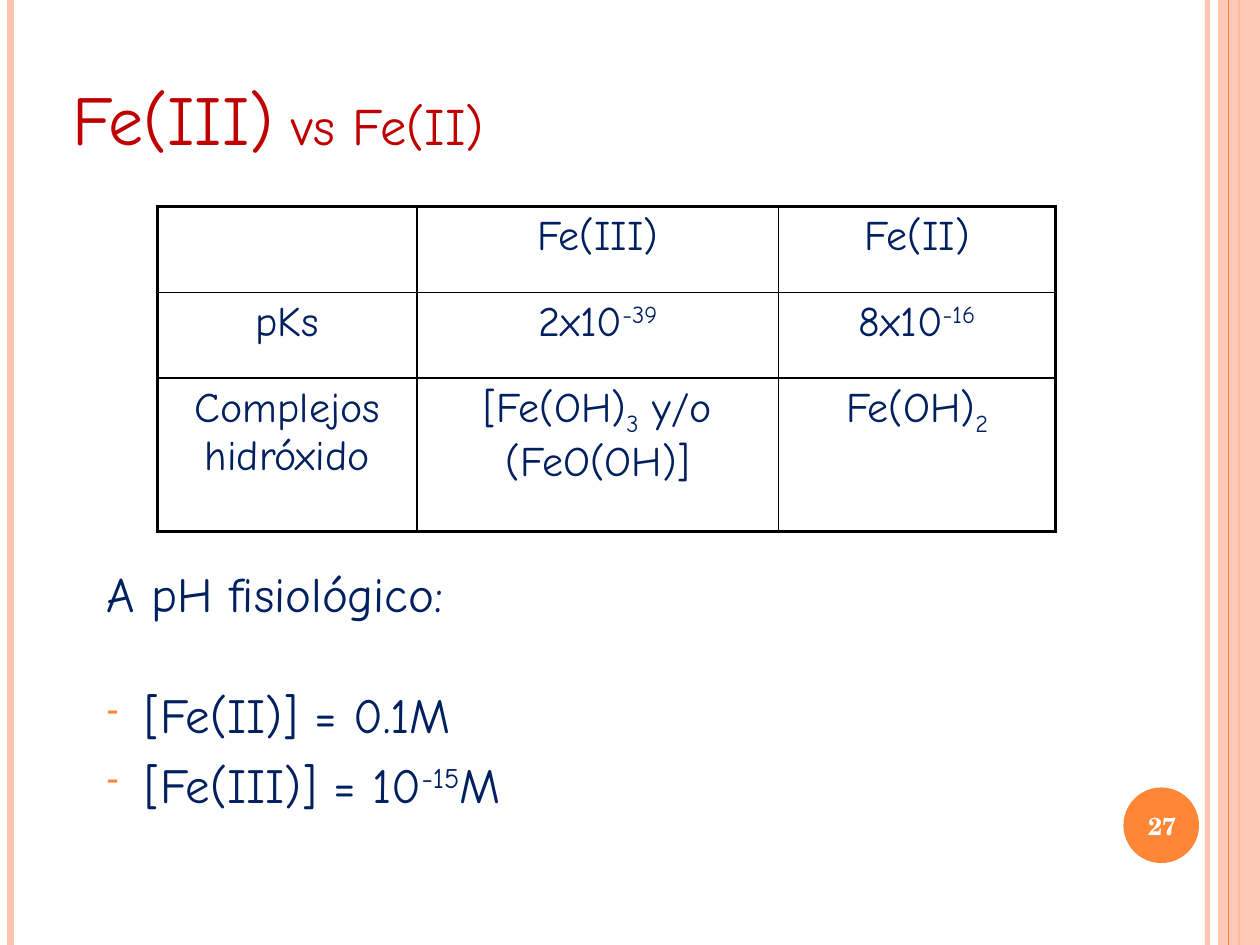
from dataclasses import dataclass

from lxml import etree
from pptx import Presentation
from pptx.dml.color import RGBColor
from pptx.enum.shapes import MSO_CONNECTOR, MSO_SHAPE
from pptx.enum.text import MSO_ANCHOR, MSO_AUTO_SIZE, PP_ALIGN
from pptx.oxml.ns import qn
from pptx.util import Pt

STRAIGHT = MSO_CONNECTOR.STRAIGHT
RECTANGLE, ELLIPSE = MSO_SHAPE.RECTANGLE, MSO_SHAPE.OVAL
LEFT, CENTER = PP_ALIGN.LEFT, PP_ALIGN.CENTER
TOP, MIDDLE, BOTTOM = MSO_ANCHOR.TOP, MSO_ANCHOR.MIDDLE, MSO_ANCHOR.BOTTOM
NO_AUTOFIT = MSO_AUTO_SIZE.NONE
SUPERSCRIPT, SUBSCRIPT = 30, -25
TITLE_ONLY = 5


@dataclass(frozen=True)
class Theme:
    font: str = "Comic Neue"
    number_font: str = "TeX Gyre Schola"
    title: str = "C00000"
    text: str = "002060"
    accent: str = "FE8637"
    pale: str = "FEC3AE"
    border: str = "000000"
    white: str = "FFFFFF"
    title_size: int = 40
    subtitle_size: int = 30
    body_size: int = 28
    table_size: int = 24
    number_size: int = 14
    outer_border: float = 2.25
    inner_border: float = 1


def add_child(parent, tag, **attributes):
    child = etree.SubElement(parent, qn(tag))
    for name, value in attributes.items():
        child.set(name, str(value))
    return child


def set_alpha(element, percent):
    for color in element.iter(qn("a:srgbClr")):
        add_child(color, "a:alpha", val=percent * 1000)


class SlideBuilder:
    def __init__(self, slide, theme):
        self.slide = slide
        self.theme = theme

    def rule(self, x, width, color, alpha=100):
        line = self.slide.shapes.add_connector(STRAIGHT, Pt(x), Pt(0), Pt(x), Pt(540))
        line.line.color.rgb = RGBColor.from_string(color)
        line.line.width = Pt(width)
        properties = line._element.spPr
        if alpha < 100:
            set_alpha(properties, alpha)
        add_child(properties, "a:effectLst")

    def shape(self, kind, place, color, alpha=100):
        shape = self.slide.shapes.add_shape(kind, *map(Pt, place))
        shape.shadow.inherit = False
        shape.fill.solid()
        shape.fill.fore_color.rgb = RGBColor.from_string(color)
        shape.line.fill.background()
        if alpha < 100:
            set_alpha(shape._element.spPr, alpha)

    def run(self, para, text, size, color, font=None, bold=False, baseline=0):
        span = para.add_run()
        span.text = text
        span.font.size = Pt(size)
        span.font.name = font or self.theme.font
        span.font.bold = bold
        span.font.color.rgb = RGBColor.from_string(color)
        if baseline:
            span.font._element.set("baseline", str(baseline * 1000))

    def frame(self, box, anchor):
        frame = box.text_frame
        frame.word_wrap = True
        frame.auto_size = NO_AUTOFIT
        frame.vertical_anchor = anchor
        return frame

    def title(self, place, spans):
        box = self.slide.shapes.title
        box.left, box.top, box.width, box.height = map(Pt, place)
        para = self.frame(box, BOTTOM).paragraphs[0]
        para.alignment = LEFT
        for text, size in spans:
            self.run(para, text, size, self.theme.title)

    def body(self, place, lines):
        frame = self.frame(self.slide.shapes.add_textbox(*map(Pt, place)), TOP)
        for index, (space, bullet, spans) in enumerate(lines):
            para = frame.add_paragraph() if index else frame.paragraphs[0]
            para.space_before = Pt(space)
            properties = para._p.get_or_add_pPr()
            properties.set("marL", str(Pt(21.6)))
            properties.set("indent", str(-Pt(21.6)))
            if bullet:
                color = add_child(properties, "a:buClr")
                add_child(color, "a:srgbClr", val=self.theme.accent)
                add_child(properties, "a:buSzPct", val=70000)
                add_child(properties, "a:buChar", char=bullet)
            for text, baseline in spans:
                self.run(para, text, self.theme.body_size, self.theme.text, baseline=baseline)

    def page_number(self, place, text):
        box = self.slide.shapes.add_textbox(*map(Pt, place))
        para = self.frame(box, MIDDLE).paragraphs[0]
        para.alignment = CENTER
        theme = self.theme
        self.run(para, text, theme.number_size, theme.white, theme.number_font, bold=True)

    def cell_borders(self, cell, outer_sides):
        properties = cell._tc.get_or_add_tcPr()
        for index, side in enumerate(("L", "R", "T", "B")):
            outer = side in outer_sides
            width = self.theme.outer_border if outer else self.theme.inner_border
            line = etree.Element(qn(f"a:ln{side}"), w=str(Pt(width)))
            fill = add_child(line, "a:solidFill")
            add_child(fill, "a:srgbClr", val=self.theme.border)
            properties.insert(index, line)

    def table(self, left, top, widths, heights, rows):
        frame = self.slide.shapes.add_table(
            len(heights), len(widths), Pt(left), Pt(top), Pt(sum(widths)), Pt(sum(heights)))
        table = frame.table
        table.first_row = table.horz_banding = False
        for column, width in zip(table.columns, widths):
            column.width = Pt(width)
        for row, height in zip(table.rows, heights):
            row.height = Pt(height)
        last_row, last_column = len(heights) - 1, len(widths) - 1
        for r, row in enumerate(rows):
            for c, spans in enumerate(row):
                cell = table.cell(r, c)
                cell.fill.background()
                edges = {"L": c == 0, "R": c == last_column, "T": r == 0, "B": r == last_row}
                self.cell_borders(cell, [side for side, outer in edges.items() if outer])
                para = cell.text_frame.paragraphs[0]
                para.alignment = CENTER
                spacing = add_child(para._p.get_or_add_pPr(), "a:spcBef")
                add_child(spacing, "a:spcPct", val=20000)
                for text, baseline in spans:
                    self.run(para, text, self.theme.table_size, self.theme.text, baseline=baseline)


def main():
    deck = Presentation()
    deck.slide_width, deck.slide_height = Pt(720), Pt(540)
    theme = Theme()
    page = SlideBuilder(deck.slides.add_slide(deck.slide_layouts[TITLE_ONLY]), theme)

    page.rule(690, 3, theme.pale, alpha=93)
    page.rule(6, 4.5, theme.pale)
    page.rule(708, 1.5, theme.accent)
    page.shape(RECTANGLE, (696, 0, 24, 540), theme.pale, alpha=87)
    page.rule(702, 0.75, theme.accent)
    page.shape(ELLIPSE, (642, 450, 43.2, 43.2), theme.accent)

    page.title((34, 39.6, 588, 55.4), [
        ("Fe(III)", theme.title_size), (" vs Fe(II)", theme.subtitle_size)])
    page.body((54, 318.2, 612, 192), [
        (6, None, [("A pH fisiológico:", 0)]),
        (36, "-", [("[Fe(II)] = 0.1M", 0)]),
        (6, "-", [("[Fe(III)] = 10", 0), ("-15", SUPERSCRIPT), ("M", 0)]),
    ])
    page.page_number((640, 451.4, 48.2, 41), "27")
    page.table(90, 118.1, (148.3, 206.6, 158.4), (49, 49, 87.8), [
        [[], [("Fe(III)", 0)], [("Fe(II)", 0)]],
        [[("pKs", 0)],
         [("2x10", 0), ("-39", SUPERSCRIPT)],
         [("8x10", 0), ("-16", SUPERSCRIPT)]],
        [[("Complejos hidróxido", 0)],
         [("[Fe(OH)", 0), ("3", SUBSCRIPT), (" y/o (FeO(OH)]", 0)],
         [("Fe(OH)", 0), ("2", SUBSCRIPT)]],
    ])
    deck.save("out.pptx")


if __name__ == "__main__":
    main()
